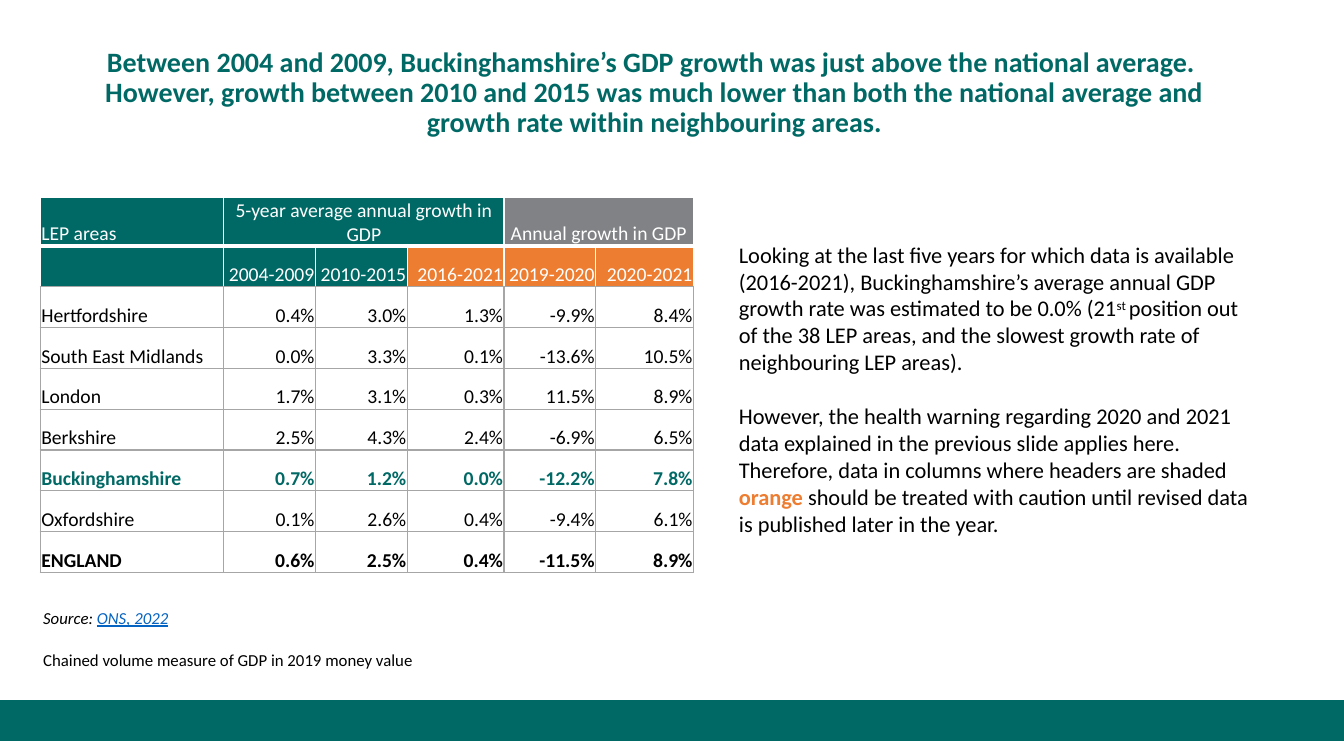
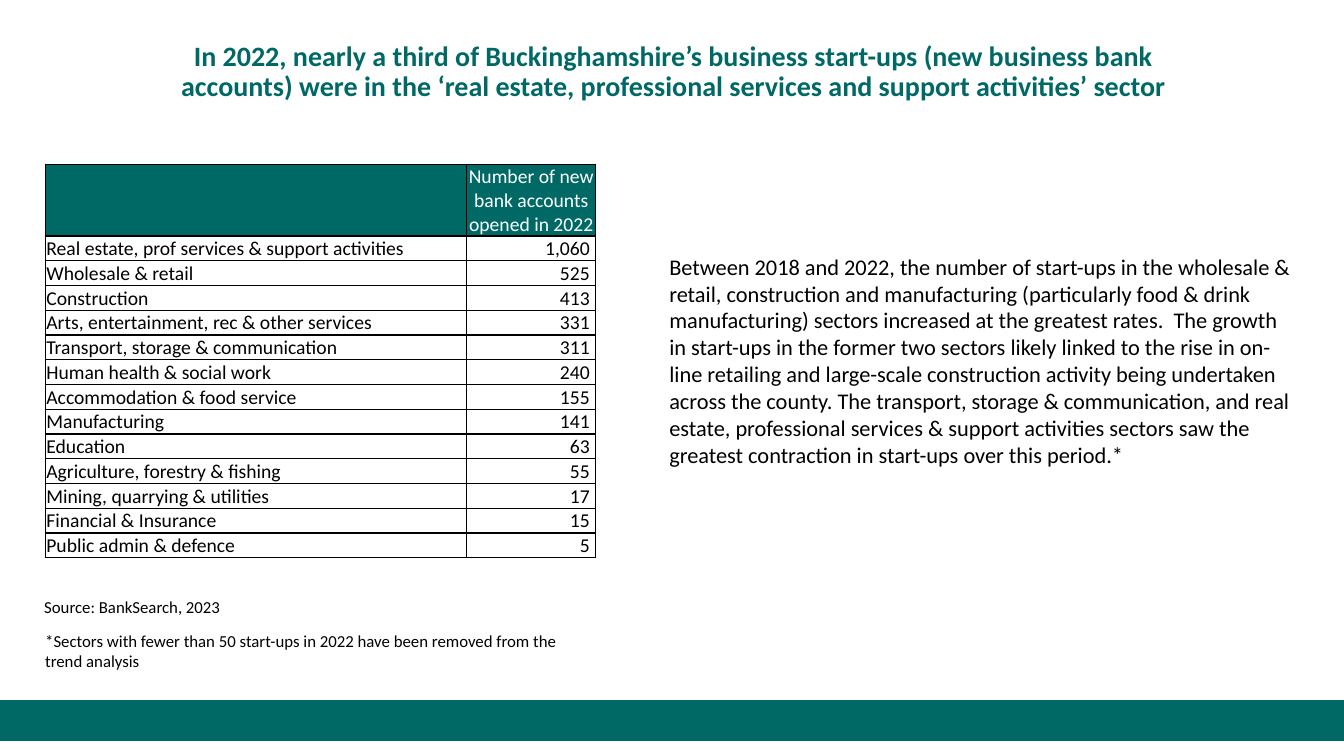
import pptx
import pptx.dml.color
import pptx.enum.shapes
import pptx.enum.text
import pptx.oxml
import pptx.oxml.ns
import pptx.util

RGB = pptx.dml.color.RGBColor
TEAL = RGB(0x00, 0x69, 0x65)
ORANGE = RGB(0xED, 0x7D, 0x31)
GRAY = RGB(0x80, 0x82, 0x85)
SILVER = RGB(0xA6, 0xA6, 0xA6)
BLUE = RGB(0x05, 0x63, 0xC1)
WHITE = RGB(0xFF, 0xFF, 0xFF)
BLACK = RGB(0x00, 0x00, 0x00)

ALIGN = pptx.enum.text.PP_ALIGN
LEFT, MID, RIGHT = ALIGN.LEFT, ALIGN.CENTER, ALIGN.RIGHT
ANCHOR = pptx.enum.text.MSO_ANCHOR
RECT = pptx.enum.shapes.MSO_SHAPE.RECTANGLE
PX = 9144  # 100 px to the inch


def write(frame, *paras, size=16, color=BLACK, bold=False, italic=False,
          align=LEFT, line=None, gap=0):
    """Fill a frame; a paragraph is a string or a list of (text, format)."""
    frame.word_wrap = True
    for i, runs in enumerate(paras):
        para = frame.paragraphs[0] if i == 0 else frame.add_paragraph()
        para.alignment = align
        if line:
            para.line_spacing = line
        if i:
            para.space_before = pptx.util.Pt(gap)
        for text, fmt in [(runs, {})] if isinstance(runs, str) else runs:
            run = para.add_run()
            run.text = text
            font = run.font
            font.name = "Calibri"
            font.size = pptx.util.Pt(size)
            font.bold = fmt.get("bold", bold)
            font.italic = italic
            font.color.rgb = fmt.get("color", color)
            if fmt.get("under"):
                font.underline = True
            if "base" in fmt:
                run._r.get_or_add_rPr().set("baseline", str(fmt["base"] * 1000))


def edge(cell, side, color, width):
    """Draw one border of a cell; side is L, R, T or B."""
    cell._tc.get_or_add_tcPr().append(pptx.oxml.parse_xml(
        f'<a:ln{side} {pptx.oxml.ns.nsdecls("a")} w="{width * 12700}">'
        f'<a:solidFill><a:srgbClr val="{color}"/></a:solidFill></a:ln{side}>'))


# Content of the two slides
growth = dict(
    title="Between 2004 and 2009, Buckinghamshire’s GDP growth was just above the "
          "national average.  However, growth between 2010 and 2015 was much lower "
          "than both the national average and growth rate within neighbouring areas.",
    top=(74, 20, 1150, 145),
    spot=(40, 196, 365),
    cols=[182, 91, 91, 96, 91, 97],
    heads=[["LEP areas", "5-year average annual growth in GDP", "", "",
            "Annual growth in GDP", ""],
           ["", "2004-2009", "2010-2015", "2016-2021", "2019-2020", "2020-2021"]],
    fills=[[TEAL] * 4 + [GRAY] * 2, [TEAL] * 3 + [ORANGE] * 3],
    spans=[(1, 3), (4, 5)],
    rows=[["Hertfordshire", "0.4%", "3.0%", "1.3%", "-9.9%", "8.4%"],
          ["South East Midlands", "0.0%", "3.3%", "0.1%", "-13.6%", "10.5%"],
          ["London", "1.7%", "3.1%", "0.3%", "11.5%", "8.9%"],
          ["Berkshire", "2.5%", "4.3%", "2.4%", "-6.9%", "6.5%"],
          ["Buckinghamshire", "0.7%", "1.2%", "0.0%", "-12.2%", "7.8%"],
          ["Oxfordshire", "0.1%", "2.6%", "0.4%", "-9.4%", "6.1%"],
          ["ENGLAND", "0.6%", "2.5%", "0.4%", "-11.5%", "8.9%"]],
    rule=SILVER, trim=WHITE, pad=1,
    notes=[
        ((33, 598, 423, 30),
         [[("Source: ", {}), ("ONS, 2022", dict(color=BLUE, under=True))]],
         dict(size=12, italic=True)),
        ((33, 640, 615, 30),
         ["Chained volume measure of GDP in 2019 money value"], dict(size=12)),
        ((723, 234, 525, 306),
         [[("Looking at the last five years for which data is available (2016-2021), "
            "Buckinghamshire’s average annual GDP growth rate was estimated to be "
            "0.0% (21", {}),
           ("st ", dict(base=30)),
           ("position out of the 38 LEP areas, and the slowest growth rate of "
            "neighbouring LEP areas).", {})],
          [("However, the health warning regarding 2020 and 2021 data explained in "
            "the previous slide applies here.  Therefore, data in columns where "
            "headers are shaded ", {}),
           ("orange", dict(color=ORANGE, bold=True)),
           (" should be treated with caution until revised data is published later "
            "in the year.", {})]],
         dict(gap=19.5)),
    ])

starts = dict(
    title="In 2022, nearly a third of Buckinghamshire’s business start-ups (new "
          "business bank accounts) were in the ‘real estate, professional services "
          "and support activities’ sector",
    top=(135, 37, 1066, 70),
    spot=(45, 163, 344),
    cols=[418, 128],
    heads=[["", "Number of new bank accounts opened in 2022"]],
    fills=[[TEAL] * 2],
    spans=[],
    rows=[["Real estate, prof services & support activities", "1,060"],
          ["Wholesale & retail", "525"],
          ["Construction", "413"],
          ["Arts, entertainment, rec & other services", "331"],
          ["Transport, storage & communication", "311"],
          ["Human health & social work", "240"],
          ["Accommodation & food service", "155"],
          ["Manufacturing", "141"],
          ["Education", "63"],
          ["Agriculture, forestry & fishing", "55"],
          ["Mining, quarrying & utilities", "17"],
          ["Financial & Insurance", "15"],
          ["Public admin & defence", "5"]],
    rule=BLACK, trim=BLACK, pad=6,
    notes=[
        ((34, 587, 300, 30), ["Source: BankSearch, 2023"], dict(size=12)),
        ((35, 621, 556, 50),
         ["*Sectors with fewer than 50 start-ups in 2022 have been removed from the "
          "trend analysis"], dict(size=12)),
        ((654, 246, 644, 226),
         ["Between 2018 and 2022, the number of start-ups in the wholesale & retail, "
          "construction and manufacturing (particularly food & drink manufacturing) "
          "sectors increased at the greatest rates.  The growth in start-ups in the "
          "former two sectors likely linked to the rise in on-line retailing and "
          "large-scale construction activity being undertaken across the county. The "
          "transport, storage & communication, and real estate, professional services "
          "& support activities sectors saw the greatest contraction in start-ups "
          "over this period.*"], {}),
    ])

# Rows that stand out, by name
STRONG = {"Buckinghamshire": TEAL, "ENGLAND": BLACK}

deck = pptx.Presentation()
deck.slide_width, deck.slide_height = 1333 * PX, 750 * PX

for page in (growth, starts):
    slide = deck.slides.add_slide(deck.slide_layouts[6])

    # Footer band
    band = slide.shapes.add_shape(RECT, 0, 695 * PX, 1333 * PX, 40 * PX)
    band.shadow.inherit = False
    band.fill.solid()
    band.fill.fore_color.rgb = TEAL
    band.line.color.rgb = TEAL
    band.line.width = pptx.util.Pt(1)

    # Title
    box = slide.shapes.add_textbox(*[n * PX for n in page["top"]])
    box.text_frame.vertical_anchor = ANCHOR.MIDDLE
    write(box.text_frame, page["title"], size=20, color=TEAL, bold=True,
          align=MID, line=0.9)

    # Table frame
    heads, cols = page["heads"], page["cols"]
    rows = heads + page["rows"]
    left, top, high = page["spot"]
    table = slide.shapes.add_table(len(rows), len(cols), left * PX, top * PX,
                                   sum(cols) * PX, high * PX).table
    table.first_row = table.horz_banding = False
    for col, wide in zip(table.columns, cols):
        col.width = wide * PX

    # Table cells
    for r, row in enumerate(rows):
        head = r < len(heads)
        last = r >= len(heads) - 1
        for c, text in enumerate(row):
            cell = table.cell(r, c)
            cell.vertical_anchor = ANCHOR.BOTTOM
            cell.margin_left = cell.margin_top = PX
            cell.margin_right = PX if head else page["pad"] * PX
            cell.margin_bottom = 0
            for side in "LRT":
                edge(cell, side, page["trim"] if head else page["rule"], 1)
            edge(cell, "B", page["rule"] if last else page["trim"], 1 if last else 3)
            cell.fill.solid()
            cell.fill.fore_color.rgb = page["fills"][r][c] if head else WHITE
            align = LEFT if c == 0 else MID if r == 0 else RIGHT
            tint = WHITE if head else STRONG.get(row[0], BLACK)
            if text:
                write(cell.text_frame, text, size=14, color=tint,
                      bold=row[0] in STRONG, align=align)
    for first, end in page["spans"]:
        table.cell(0, first).merge(table.cell(0, end))

    # Notes and body text
    for spot, paras, fmt in page["notes"]:
        box = slide.shapes.add_textbox(*[n * PX for n in spot])
        write(box.text_frame, *paras, **fmt)

deck.save("out.pptx")
